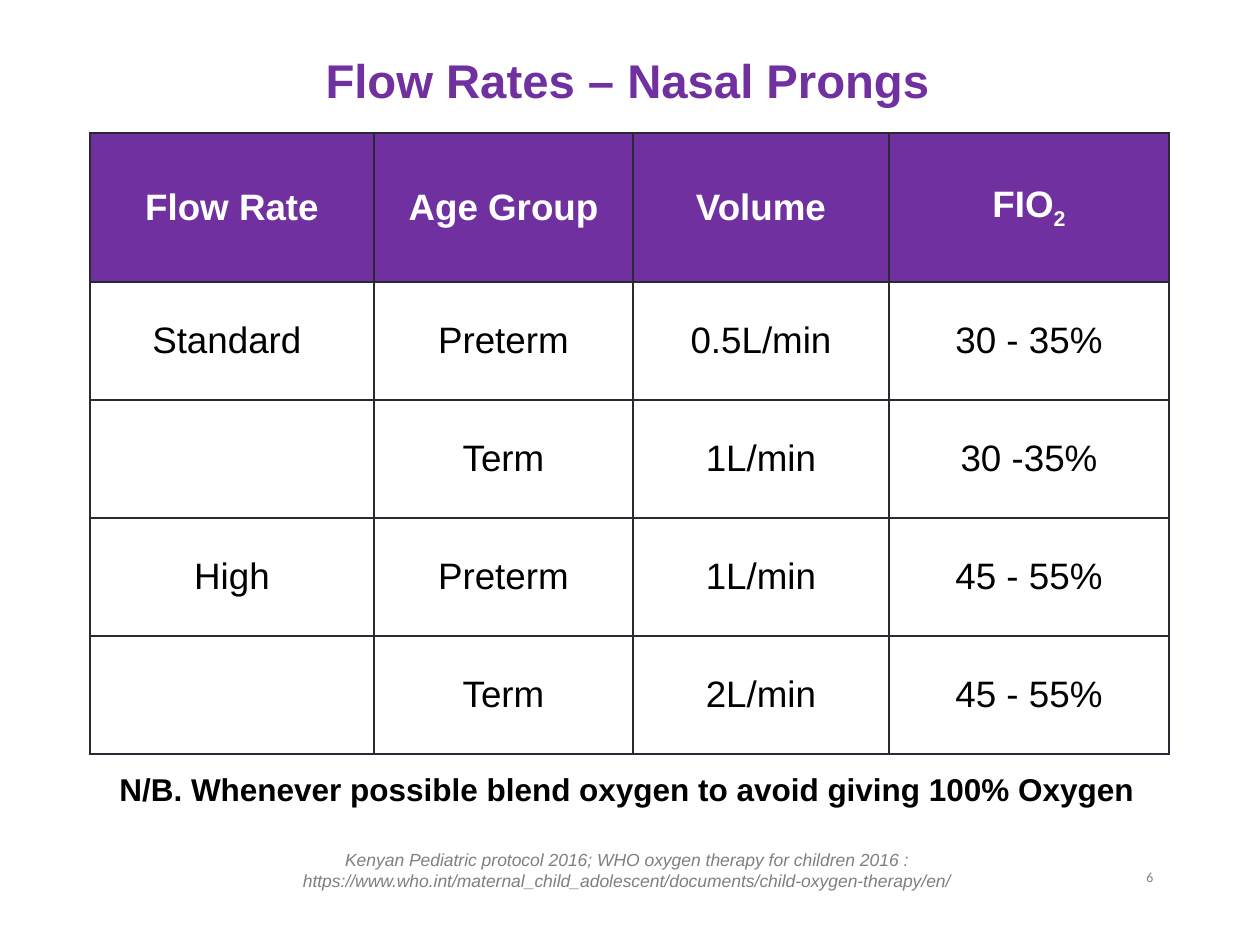
from typing import NamedTuple

from lxml.etree import SubElement
from pptx import Presentation
from pptx.dml.color import RGBColor
from pptx.enum.text import MSO_ANCHOR as ANCHOR, PP_ALIGN as ALIGN
from pptx.oxml.ns import qn
from pptx.util import Emu, Inches, Pt

PX_PER_INCH = 126
COLORS = {"purple": "7030A0", "white": "FFFFFF", "black": "000000",
          "border": "292934", "source": "7F7F7F", "number": "808080"}


class Box(NamedTuple):
    x: int
    y: int
    w: int
    h: int


class Note(NamedTuple):
    text: str
    box: Box
    fmt: dict


TITLE_BOX = Box(291, 47, 673, 72)
TABLE_BOX = Box(90, 133, 1079, 621)
COL_WIDTHS = [284, 259, 256, 280]
ROW_HEIGHTS = [149] + [118] * 4
ROWS = [
    ["Flow Rate", "Age Group", "Volume", "FIO"],
    ["Standard ", "Preterm", "0.5L/min", "30 - 35%"],
    ["", "Term", "1L/min", "30 -35%"],
    ["High", "Preterm", "1L/min", "45 - 55%"],
    ["", "Term", "2L/min", "45 - 55%"],
]
NOTES = [
    Note("Kenyan Pediatric protocol 2016; WHO oxygen therapy for children 2016 : "
         "https://www.who.int/maternal_child_adolescent/documents/child-oxygen-therapy/en/",
         Box(176, 843, 901, 55),
         dict(size=10, color="source", italic=True, align=ALIGN.CENTER)),
    Note("N/B. Whenever possible blend oxygen to avoid giving 100% Oxygen",
         Box(107, 764, 1060, 50), dict(size=18, bold=True)),
    Note("6", Box(1134, 862, 64, 28),
         dict(size=7.9, color="number", font="Calibri")),
]


def px(n: int) -> Emu:
    return Emu(round(n * Inches(1) / PX_PER_INCH))


def emus(box: Box) -> list[Emu]:
    return [px(n) for n in box]


def add_text(p, text: str, *, size: float, color: str = "black", font: str = "Arial",
             bold: bool = False, italic: bool = False, align=ALIGN.LEFT):
    p.alignment = align
    r = p.add_run()
    r.text = text
    r.font.name, r.font.size = font, Pt(size)
    r.font.bold, r.font.italic = bold, italic
    r.font.color.rgb = RGBColor.from_string(COLORS[color])
    return r


def add_borders(cell, color: str, width: float) -> None:
    tc_pr = cell._tc.get_or_add_tcPr()
    for side in ("lnL", "lnR", "lnT", "lnB"):
        ln = SubElement(tc_pr, qn(f"a:{side}"), w=str(Pt(width)))
        fill = SubElement(ln, qn("a:solidFill"))
        SubElement(fill, qn("a:srgbClr"), val=COLORS[color])


def add_title(slide, text: str) -> None:
    sp = slide.shapes.title
    sp.left, sp.top, sp.width, sp.height = emus(TITLE_BOX)
    tf = sp.text_frame
    tf.vertical_anchor = ANCHOR.MIDDLE
    p = tf.paragraphs[0]
    p.line_spacing = 0.9
    add_text(p, text, size=27, color="purple", bold=True, align=ALIGN.CENTER)


def fill_cell(cell, text: str, header: bool) -> None:
    add_borders(cell, "border", 1)
    if header:
        cell.fill.solid()
        cell.fill.fore_color.rgb = RGBColor.from_string(COLORS["purple"])
    else:
        cell.fill.background()
    cell.vertical_anchor = ANCHOR.MIDDLE
    cell.margin_left = cell.margin_right = Inches(0.08)
    cell.margin_top = cell.margin_bottom = Inches(0.04)
    if not text:
        return
    p = cell.text_frame.paragraphs[0]
    fmt = dict(size=21, color="white" if header else "black",
               bold=header, align=ALIGN.CENTER)
    add_text(p, text, **fmt)
    if text == "FIO":
        subscript = add_text(p, "2", **fmt)
        subscript.font._element.set("baseline", "-25000")


def add_flow_table(slide) -> None:
    table = slide.shapes.add_table(len(ROWS), len(COL_WIDTHS), *emus(TABLE_BOX)).table
    table.horz_banding = False
    for col, width in zip(table.columns, COL_WIDTHS):
        col.width = px(width)
    for i, (row, height) in enumerate(zip(table.rows, ROW_HEIGHTS)):
        row.height = px(height)
        for cell, text in zip(row.cells, ROWS[i]):
            fill_cell(cell, text, header=i == 0)


def add_note(slide, note: Note) -> None:
    tf = slide.shapes.add_textbox(*emus(note.box)).text_frame
    tf.word_wrap = True
    add_text(tf.paragraphs[0], note.text, **note.fmt)


def main() -> None:
    prs = Presentation()
    prs.slide_width, prs.slide_height = Inches(10), Inches(7.5)
    slide = prs.slides.add_slide(prs.slide_layouts[5])  # Title Only

    add_title(slide, "Flow Rates – Nasal Prongs")
    add_flow_table(slide)
    # Source, remark and page number
    for note in NOTES:
        add_note(slide, note)

    prs.save("out.pptx")


if __name__ == "__main__":
    main()
